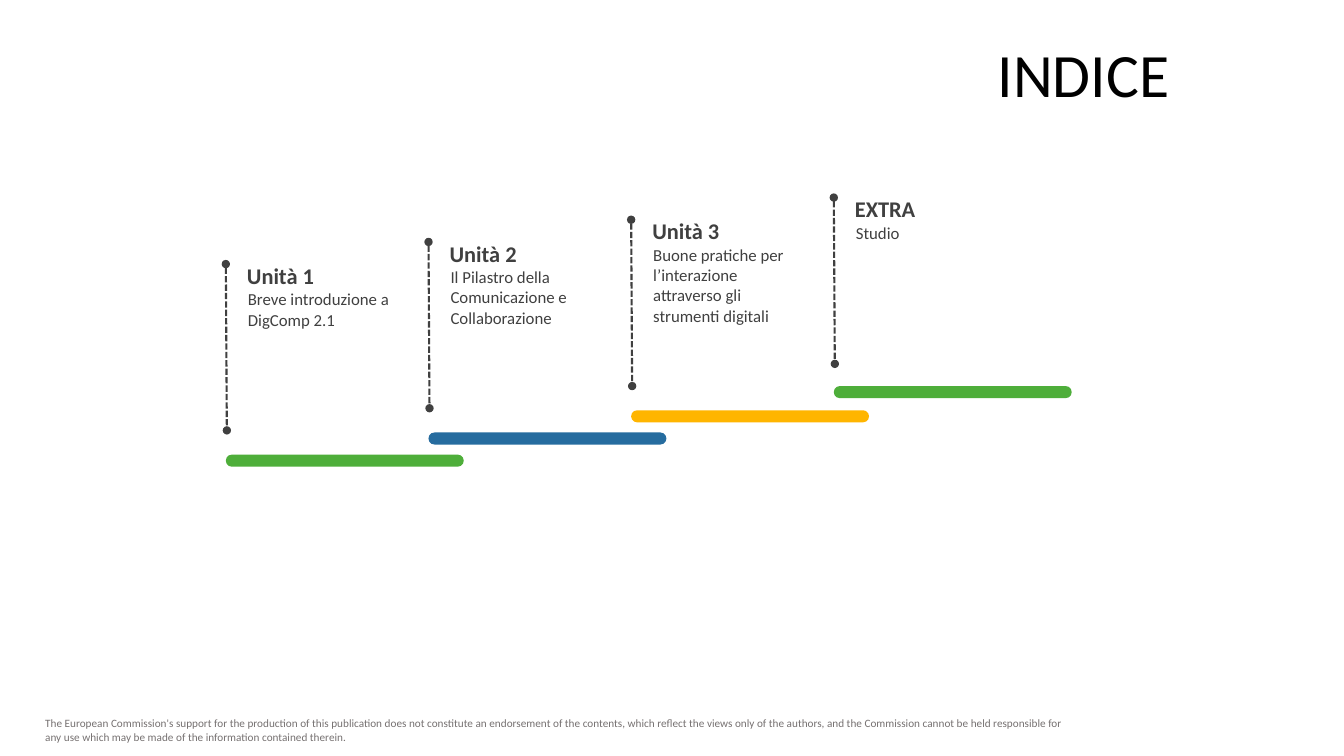
from lxml import etree
from pptx import Presentation, util as u
from pptx.dml.color import RGBColor
from pptx.enum import dml, shapes, text
from pptx.oxml import ns

UNITS = [
    ("Unità 1", "Breve introduzione a DigComp 2.1", 0.5, 4.51, "4EAE3A"),
    ("Unità 2", "Il Pilastro della Comunicazione e Collaborazione", 0.71, 4.29, "266C9F"),
    ("Unità 3", "Buone pratiche per l’interazione attraverso gli strumenti digitali", 0.91, 4.07, "FFB500"),
    ("EXTRA", "Studio", 0.3, 3.83, "4EAE3A"),
]
DISCLAIMER = (
    "The European Commission's support for the production of this publication does not "
    "constitute an endorsement of the contents, which reflect the views only of the authors, "
    "and the Commission cannot be held responsible for any use which may be made of the "
    "information contained therein."
)


def color(value):
    return RGBColor.from_string(value)


class SlideBuilder:
    """Draws styled elements on one slide."""

    font = "Calibri"
    ink = "404040"

    def __init__(self, presentation):
        self.slide = presentation.slides.add_slide(presentation.slide_layouts[5])

    def set_text(self, shape, content, size, fill, bold=False):
        frame = shape.text_frame
        frame.word_wrap = True
        frame.text = content
        paragraph = frame.paragraphs[0]
        for run in paragraph.runs:
            run.font.name = self.font
            run.font.size = u.Pt(size)
            run.font.bold = bold
            run.font.color.rgb = color(fill)
        return paragraph

    def title(self, content, left, top, width, height):
        shape = self.slide.shapes.title
        shape.left, shape.top = u.Inches(left), u.Inches(top)
        shape.width, shape.height = u.Inches(width), u.Inches(height)
        paragraph = self.set_text(shape, content, 44, "000000")
        paragraph.alignment = text.PP_ALIGN.RIGHT
        paragraph.line_spacing = 0.9
        shape.text_frame.vertical_anchor = text.MSO_ANCHOR.MIDDLE

    def label(self, content, left, top, width, height, size, fill=ink, bold=False, inset=0.1):
        shape = self.slide.shapes.add_textbox(
            u.Inches(left), u.Inches(top), u.Inches(width), u.Inches(height))
        self.set_text(shape, content, size, fill, bold)
        shape.text_frame.margin_left = shape.text_frame.margin_right = u.Inches(inset)

    def bar(self, left, top, width, height, fill):
        shape = self.slide.shapes.add_shape(
            shapes.MSO_SHAPE.ROUNDED_RECTANGLE,
            u.Inches(left), u.Inches(top), u.Inches(width), u.Inches(height))
        shape.adjustments[0] = 0.5
        shape.shadow.inherit = False
        shape.fill.solid()
        shape.fill.fore_color.rgb = color(fill)
        shape.line.fill.background()

    def dashed_line(self, x1, y1, x2, y2):
        connector = self.slide.shapes.add_connector(
            shapes.MSO_CONNECTOR.STRAIGHT,
            u.Inches(x1), u.Inches(y1), u.Inches(x2), u.Inches(y2))
        line = connector.line
        line.color.rgb = color(self.ink)
        line.width = u.Pt(1.5)
        line.dash_style = dml.MSO_LINE.SQUARE_DOT
        properties = connector._element.spPr
        outline = properties.find(ns.qn("a:ln"))
        for end in ("a:headEnd", "a:tailEnd"):
            etree.SubElement(outline, ns.qn(end), type="oval")
        etree.SubElement(properties, ns.qn("a:effectLst"))


def main():
    presentation = Presentation()
    presentation.slide_width = u.Inches(13.33)
    presentation.slide_height = u.Inches(7.5)
    builder = SlideBuilder(presentation)
    builder.label(DISCLAIMER, 0.35, 7.06, 10.46, 0.37, 8, "767171")
    builder.title("INDICE", 3.09, 0.37, 8.61, 0.79)
    for index, (heading, topic, topic_height, bar_top, fill) in enumerate(UNITS):
        left = 2.24 + 2.01 * index
        top = 2.62 - 0.22 * index
        builder.bar(left, bar_top, 2.36, 0.12, fill)
        builder.label(topic, left + 0.12, top + 0.2, 1.72, topic_height, 12)
        builder.label(heading, left + 0.09, top - 0.07, 1.73, 0.37, 16, bold=True, inset=0.12)
        builder.dashed_line(left, top, left + 0.01, top + 1.65)
    presentation.save("out.pptx")


if __name__ == "__main__":
    main()
